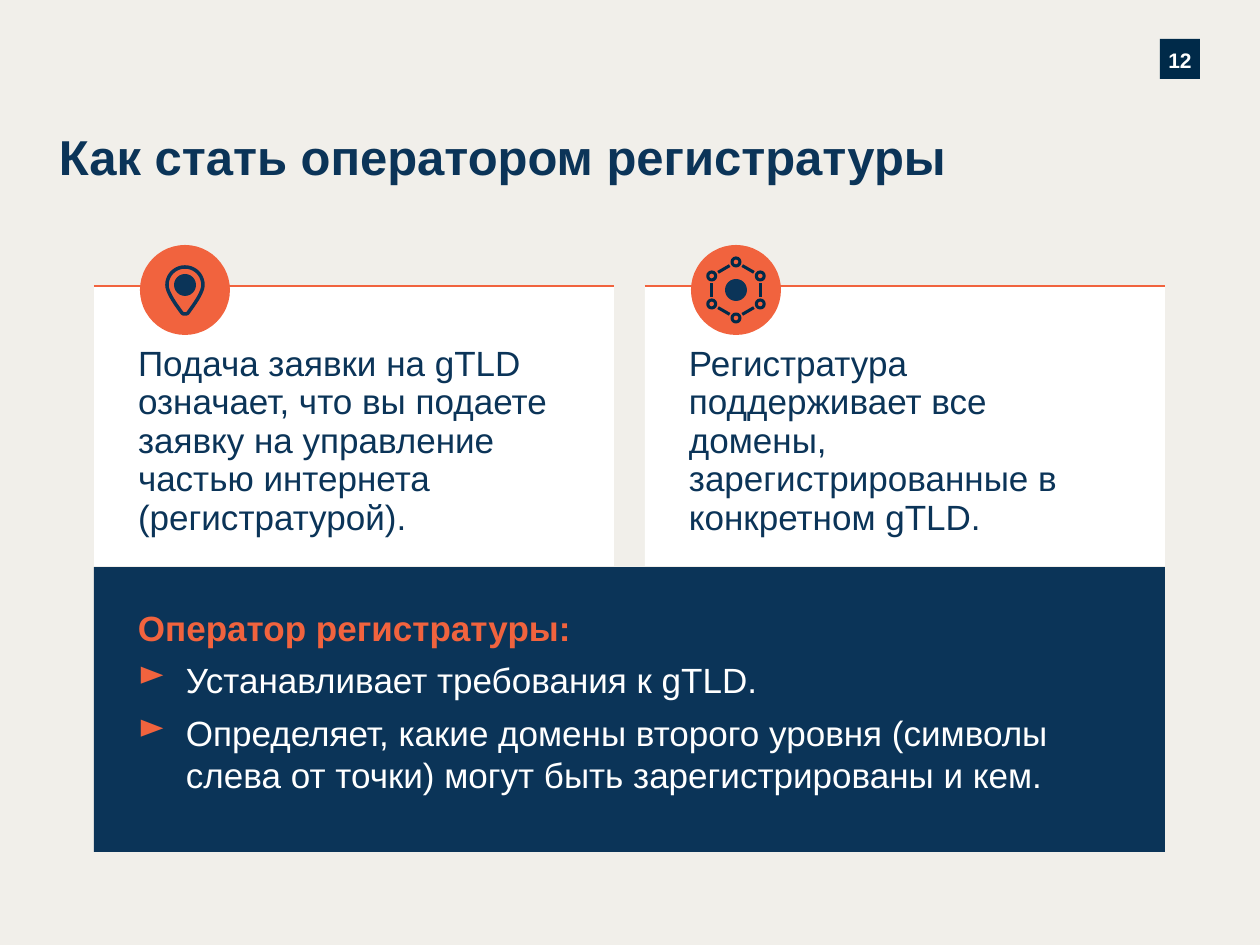
from math import cos, radians, sin

from lxml import etree
from pptx import Presentation
from pptx.dml.color import RGBColor
from pptx.enum.shapes import MSO_CONNECTOR, MSO_SHAPE
from pptx.enum.text import MSO_ANCHOR, PP_ALIGN
from pptx.oxml.ns import qn
from pptx.util import Emu, Pt

RECTANGLE, OVAL = MSO_SHAPE.RECTANGLE, MSO_SHAPE.OVAL
STRAIGHT = MSO_CONNECTOR.STRAIGHT
TOP, MIDDLE = MSO_ANCHOR.TOP, MSO_ANCHOR.MIDDLE
LEFT, CENTER = PP_ALIGN.LEFT, PP_ALIGN.CENTER

PX_PER_INCH = 126
FONT = "Arial"
PAPER, WHITE = "F1EFEA", "FFFFFF"
NAVY, DARK, ORANGE = "0B3458", "002A49", "F1633E"

CARD_LEFTS = (94, 645)
CARD_TOP, CARD_WIDTH, CARD_HEIGHT = 286, 520, 280
CARD_TEXTS = (
    "Подача заявки на gTLD означает, что вы подаете заявку на управление "
    "частью интернета (регистратурой).",
    "Регистратура поддерживает все домены, зарегистрированные в конкретном gTLD.",
)
PANEL_HEADING = "Оператор регистратуры:"
PANEL_ITEMS = (
    "Устанавливает требования к gTLD.",
    "Определяет, какие домены второго уровня (символы слева от точки) "
    "могут быть зарегистрированы и кем.",
)
ICON_OFFSET, ICON_RADIUS = 91, 45


def px(value):
    return Emu(round(value * 914400 / PX_PER_INCH))


def colour(value):
    return RGBColor.from_string(value)


def apply(target, values):
    for name, value in values.items():
        setattr(target, name, value)


def set_font(paragraph, size, text_colour, bold=False):
    apply(paragraph.font, {"name": FONT, "size": Pt(size), "bold": bold})
    paragraph.font.color.rgb = colour(text_colour)


def set_frame(text_frame, insets=(0, 0, 0, 0), anchor=TOP):
    sides = ("margin_left", "margin_top", "margin_right", "margin_bottom")
    apply(text_frame, dict(zip(sides, map(px, insets))))
    apply(text_frame, {"word_wrap": True, "vertical_anchor": anchor})


def paint(shape, fill=None, line=None, width=0):
    shape.shadow.inherit = False
    if fill:
        shape.fill.solid()
        shape.fill.fore_color.rgb = colour(fill)
    else:
        shape.fill.background()
    if line:
        shape.line.color.rgb = colour(line)
        shape.line.width = Pt(width)
    else:
        shape.line.fill.background()


def add_box(shapes, left, top, width, height, fill):
    shape = shapes.add_shape(RECTANGLE, px(left), px(top), px(width), px(height))
    paint(shape, fill)
    return shape


def add_circle(shapes, x, y, radius, **style):
    shape = shapes.add_shape(OVAL, px(x - radius), px(y - radius),
                             px(2 * radius), px(2 * radius))
    paint(shape, **style)


def add_line(shapes, start, end, line, width):
    connector = shapes.add_connector(STRAIGHT, *map(px, (*start, *end)))
    connector.line.color.rgb = colour(line)
    connector.line.width = Pt(width)
    etree.SubElement(connector._element.spPr, qn("a:effectLst"))


def add_bullet(paragraph):
    properties = paragraph._p.get_or_add_pPr()
    properties.set("marL", str(px(48)))
    properties.set("indent", str(px(-48)))
    bullet_colour = etree.SubElement(properties, qn("a:buClr"))
    etree.SubElement(bullet_colour, qn("a:srgbClr"), val=ORANGE)
    etree.SubElement(properties, qn("a:buChar"), char="►")


def curve_points(start, controls, steps=10):
    """Points along one cubic curve, without its start."""
    points = (start, *controls)
    for step in range(1, steps + 1):
        t = step / steps
        weights = ((1 - t) ** 3, 3 * t * (1 - t) ** 2, 3 * t * t * (1 - t), t ** 3)
        yield tuple(sum(w * p[axis] for w, p in zip(weights, points))
                    for axis in (0, 1))


def add_page_number(slide):
    badge = add_box(slide.shapes, 1160, 39, 40, 40, DARK)
    set_frame(badge.text_frame, anchor=MIDDLE)
    paragraph = badge.text_frame.paragraphs[0]
    apply(paragraph, {"text": "12", "alignment": CENTER, "line_spacing": 1.08})
    set_font(paragraph, 12, WHITE, bold=True)


def add_title(slide):
    title = slide.shapes.title
    apply(title, {"left": px(59), "top": px(123), "width": px(916), "height": px(66)})
    set_frame(title.text_frame, anchor=MIDDLE)
    paragraph = title.text_frame.paragraphs[0]
    apply(paragraph, {"text": "Как стать оператором регистратуры", "alignment": LEFT})
    set_font(paragraph, 28, NAVY, bold=True)


def add_card(slide, left, text):
    card = add_box(slide.shapes, left, CARD_TOP, CARD_WIDTH, CARD_HEIGHT, WHITE)
    set_frame(card.text_frame, (44, 59, 49, 38))
    paragraph = card.text_frame.paragraphs[0]
    apply(paragraph, {"text": text, "alignment": LEFT, "line_spacing": Pt(22)})
    set_font(paragraph, 20, NAVY)
    add_line(slide.shapes, (left, CARD_TOP), (left + CARD_WIDTH, CARD_TOP), ORANGE, 1.25)


def add_panel(slide):
    panel = add_box(slide.shapes, 94, 567, 1071, 285, NAVY)
    frame = panel.text_frame
    set_frame(frame, (44, 39, 59, 38))
    heading = frame.paragraphs[0]
    apply(heading, {"text": PANEL_HEADING, "alignment": LEFT})
    set_font(heading, 20, ORANGE, bold=True)
    for text in PANEL_ITEMS:
        item = frame.add_paragraph()
        apply(item, {"text": text, "alignment": LEFT, "space_before": Pt(6)})
        add_bullet(item)
        set_font(item, 20, WHITE)


def add_icon_disc(slide, x, y):
    shapes = slide.shapes.add_group_shape().shapes
    add_circle(shapes, x, y, ICON_RADIUS, fill=ORANGE)
    return shapes


def add_pin_icon(slide, x, y):
    shapes = add_icon_disc(slide, x, y)
    add_circle(shapes, x, y - 5, 11, fill=NAVY)
    # Left half from the tip to the top, then its mirror image
    half = [(0, 24)]
    for controls in (((-1, 24), (-2, 24), (-3, 23)),
                     ((-8, 16), (-18, 3), (-18, -5)),
                     ((-18, -15), (-10, -23), (0, -23))):
        half.extend(curve_points(half[-1], controls))
    outline = half + [(-dx, dy) for dx, dy in reversed(half[1:-1])]
    points = [(px(x + dx), px(y + dy)) for dx, dy in outline]
    builder = shapes.build_freeform(*points[0])
    builder.add_line_segments(points[1:], close=True)
    paint(builder.convert_to_shape(), line=NAVY, width=2)


def add_network_icon(slide, x, y):
    shapes = add_icon_disc(slide, x, y)
    angles = [radians(60 * index - 90) for index in range(6)]
    nodes = [(x + 28 * cos(angle), y + 28 * sin(angle)) for angle in angles]
    for (x1, y1), (x2, y2) in zip(nodes, nodes[1:] + nodes[:1]):
        start, end = ((x1 + (x2 - x1) * part, y1 + (y2 - y1) * part)
                      for part in (0.26, 0.74))
        add_line(shapes, start, end, DARK, 1.75)
    for node in nodes:
        add_circle(shapes, *node, 4, line=DARK, width=1.75)
    add_circle(shapes, x, y, 11, fill=NAVY)


def main():
    presentation = Presentation()
    presentation.slide_width, presentation.slide_height = px(1260), px(945)
    slide = presentation.slides.add_slide(presentation.slide_layouts[5])
    slide.background.fill.solid()
    slide.background.fill.fore_color.rgb = colour(PAPER)

    # Header
    add_page_number(slide)
    add_title(slide)

    # Cards and panel
    for left, text in zip(CARD_LEFTS, CARD_TEXTS):
        add_card(slide, left, text)
    add_panel(slide)

    # Icons on the card edges
    for left, add_icon in zip(CARD_LEFTS, (add_pin_icon, add_network_icon)):
        add_icon(slide, left + ICON_OFFSET, CARD_TOP + 4)

    presentation.save("out.pptx")


if __name__ == "__main__":
    main()
